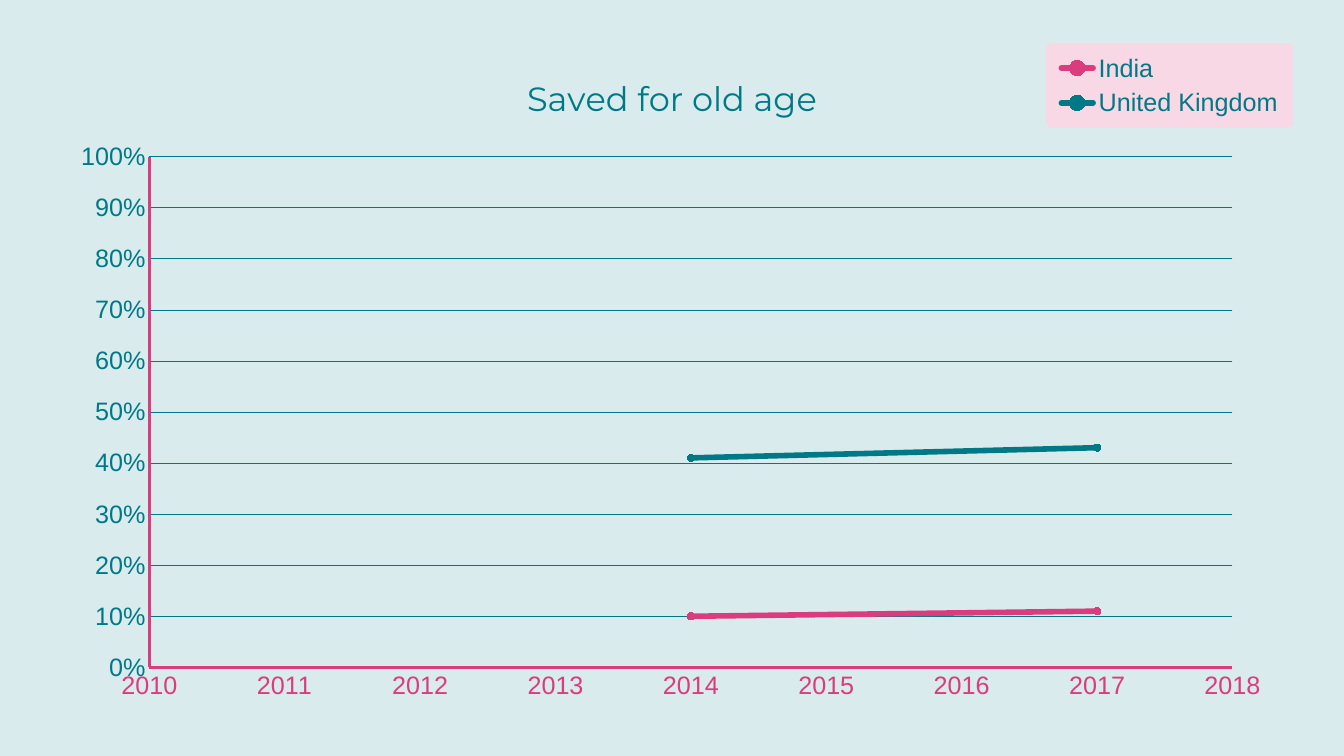
import pptx
import pptx.chart.data
import pptx.dml.color
import pptx.enum.chart
import pptx.oxml
import pptx.oxml.ns
import pptx.util

Cm = pptx.util.Cm
Pt = pptx.util.Pt
enum = pptx.enum.chart
qn = pptx.oxml.ns.qn

HUES = {"teal": "007987", "pink": "DA3C7E", "back": "D9EBED", "pale": "F8D8E5"}
YEARS = (2011, 2014, 2017)
SHARES = {
    "India": ("pink", (None, 0.1, 0.11)),
    "United Kingdom": ("teal", (None, 0.41, 0.43)),
}


def apply(item, values):
    for name, value in values.items():
        setattr(item, name, value)


class Deck:
    face = "Arial"
    size = 18

    def __init__(self):
        self.show = pptx.Presentation()
        apply(self.show, {"slide_width": Cm(33.87), "slide_height": Cm(19.05)})
        self.slide = self.show.slides.add_slide(self.show.slide_layouts[6])
        self.fill(self.slide.background.fill, "back")

    def hue(self, name):
        return pptx.dml.color.RGBColor.from_string(HUES[name])

    def fill(self, fill, hue):
        fill.solid()
        fill.fore_color.rgb = self.hue(hue)

    def font(self, font, hue, **extra):
        apply(font, {"name": self.face, "size": Pt(self.size), "bold": False, **extra})
        font.color.rgb = self.hue(hue)

    def line(self, line, hue, width):
        self.fill(line.fill, hue)
        line.width = Pt(width)

    def chart(self, left, top, width, height):
        data = pptx.chart.data.XyChartData()
        for name, (_, values) in SHARES.items():
            series = data.add_series(name)
            for year, value in zip(YEARS, values):
                series.add_data_point(year, value)
        self.area = (Cm(width), Cm(height))
        frame = self.slide.shapes.add_chart(
            enum.XL_CHART_TYPE.XY_SCATTER_LINES, Cm(left), Cm(top), *self.area, data)
        self.plot = frame.chart
        self.font(self.plot.font, "teal")
        for point in self.plot.element.findall(".//" + qn("c:pt")):
            if point.findtext(qn("c:v")) in ("None", ""):
                point.getparent().remove(point)

    def series(self):
        self.plot.plots[0].vary_by_categories = False
        for series in self.plot.plots[0].series:
            hue = SHARES[series.name][0]
            series.smooth = False
            self.line(series.format.line, hue, 4)
            mark = series.marker
            apply(mark, {"style": enum.XL_MARKER_STYLE.CIRCLE, "size": 5})
            self.fill(mark.format.fill, hue)
            self.line(mark.format.line, hue, 0.75)
        for line in self.plot.element.iterfind(
                ".//" + "/".join(map(qn, ("c:ser", "c:spPr", "a:ln")))):
            line.set("cap", "rnd")

    def axis(self, axis, hue, form, grid, **scale):
        none = enum.XL_TICK_MARK.NONE
        apply(axis, {"major_tick_mark": none, "minor_tick_mark": none,
                     "has_major_gridlines": grid, **scale})
        apply(axis.tick_labels, {"number_format": form, "number_format_is_linked": False})
        self.font(axis.tick_labels.font, hue)
        self.line(axis.format.line, "pink", 2.5)
        if grid:
            self.line(axis.major_gridlines.format.line, "teal", 0.25)

    def title(self, text):
        self.plot.has_title = True
        frame = self.plot.chart_title.text_frame
        frame.text = text
        self.font(frame.paragraphs[0].runs[0].font, "teal", name="Montserrat", size=Pt(24))

    def legend(self):
        self.plot.has_legend = True
        legend = self.plot.legend
        apply(legend, {"position": enum.XL_LEGEND_POSITION.CORNER, "include_in_layout": True})
        self.font(legend.font, "teal")
        paint = f'<a:solidFill><a:srgbClr val="{HUES["pale"]}"/></a:solidFill>'
        box = pptx.oxml.parse_xml(
            f'<c:spPr {pptx.oxml.ns.nsdecls("c", "a")}>{paint}'
            f'<a:ln w="{Pt(6)}">{paint}<a:round/></a:ln></c:spPr>')
        self.plot.element.find(".//" + qn("c:legend")).find(qn("c:overlay")).addnext(box)

    def place(self, tag, index, left, top, width=None, height=None):
        node = self.plot.element.find(".//" + qn(tag))
        for old in node.findall(qn("c:layout")):
            node.remove(old)
        wide, high = self.area
        parts = {"x": Cm(left) / wide, "y": Cm(top) / high}
        if width:
            parts.update(w=Cm(width) / wide, h=Cm(height) / high)
        inner = '<c:layoutTarget val="inner"/>' if tag == "c:plotArea" else ""
        modes = '<c:xMode val="edge"/><c:yMode val="edge"/>'
        sides = "".join(f'<c:{key} val="{part:.4f}"/>' for key, part in parts.items())
        node.insert(index, pptx.oxml.parse_xml(
            f'<c:layout {pptx.oxml.ns.nsdecls("c")}><c:manualLayout>'
            f'{inner}{modes}{sides}</c:manualLayout></c:layout>'))


def main():
    deck = Deck()
    deck.chart(1.44, 1.09, 31.14, 16.87)
    deck.series()
    deck.axis(deck.plot.category_axis, "pink", "General", False,
              minimum_scale=2010, maximum_scale=2018, major_unit=1)
    deck.axis(deck.plot.value_axis, "teal", "0%", True,
              minimum_scale=0, maximum_scale=1, major_unit=0.1)
    deck.title("Saved for old age")
    deck.legend()
    deck.place("c:plotArea", 0, 2.33, 2.85, 27.32, 12.88)
    deck.place("c:title", 1, 11.7, 0.63)
    deck.place("c:legend", 1, 25.06, 0.1, 6, 1.92)
    deck.show.save("out.pptx")


if __name__ == "__main__":
    main()
